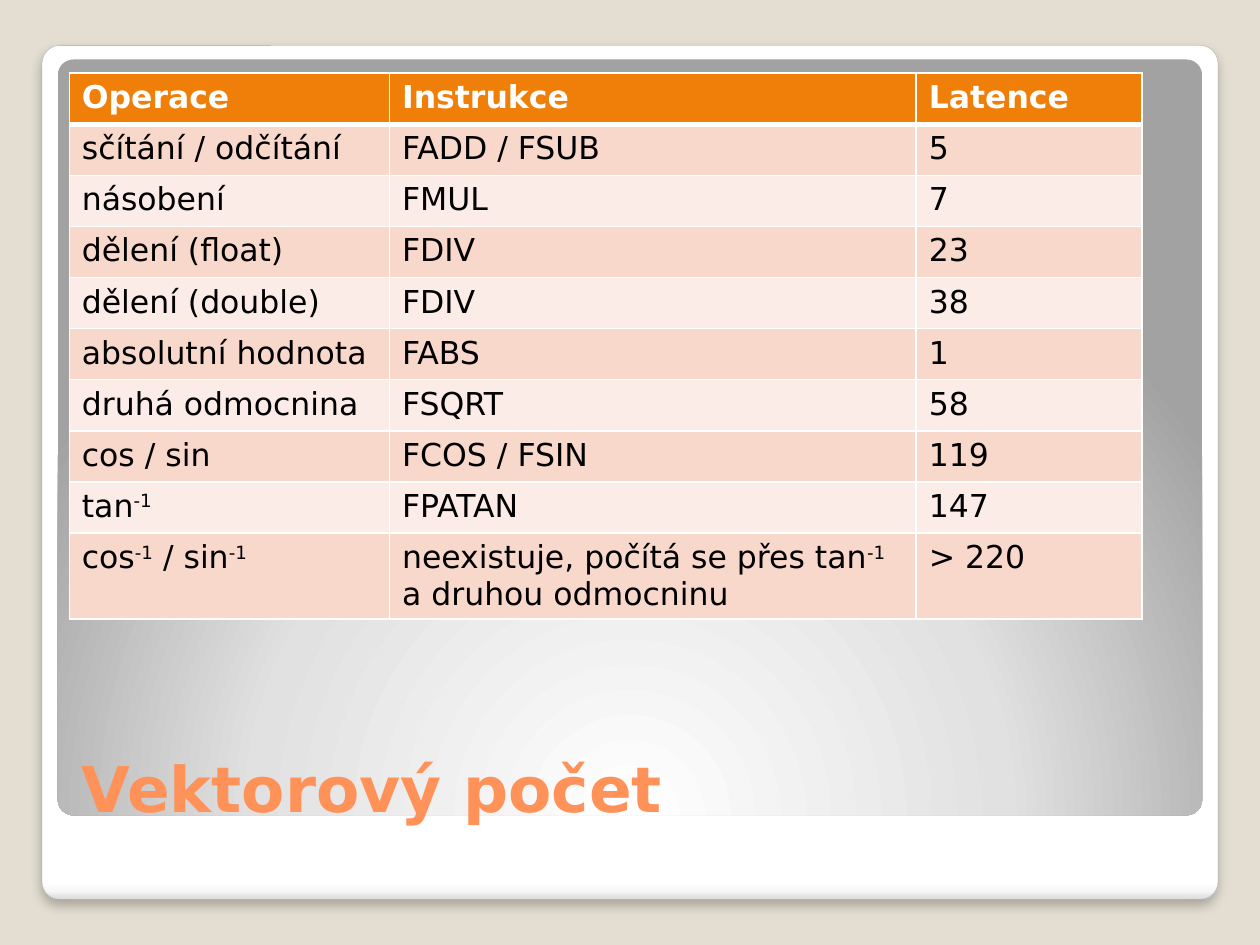
from lxml import etree
from pptx import Presentation
from pptx.dml.color import RGBColor
from pptx.enum.shapes import MSO_SHAPE
from pptx.enum.text import MSO_ANCHOR, PP_ALIGN
from pptx.oxml import parse_xml
from pptx.oxml.ns import nsdecls, qn
from pptx.util import Pt

FONT = "DejaVu Sans"
BACKGROUND = RGBColor(0xE3, 0xDE, 0xD1)
FRAME_LINE = RGBColor(0xA4, 0xA4, 0xA4)
TITLE = RGBColor(0xFF, 0x92, 0x58)
HEADER = RGBColor(0xF0, 0x7F, 0x09)
BANDS = [RGBColor(0xFC, 0xEC, 0xE7), RGBColor(0xF9, 0xD8, 0xCC)]
WHITE = RGBColor(0xFF, 0xFF, 0xFF)
BLACK = RGBColor(0, 0, 0)

# Text between carets is superscript
ROWS = [
    ("Operace", "Instrukce", "Latence"),
    ("sčítání / odčítání", "FADD / FSUB", "5"),
    ("násobení", "FMUL", "7"),
    ("dělení (float)", "FDIV", "23"),
    ("dělení (double)", "FDIV", "38"),
    ("absolutní hodnota", "FABS", "1"),
    ("druhá odmocnina", "FSQRT", "58"),
    ("cos / sin", "FCOS / FSIN", "119"),
    ("tan^-1^", "FPATAN", "147"),
    ("cos^-1^ / sin^-1^", "neexistuje, počítá se přes tan^-1^ a druhou odmocninu", "> 220"),
]


def add_panel(slide, left, top, width, height, stops, direction):
    panel = slide.shapes.add_shape(
        MSO_SHAPE.ROUNDED_RECTANGLE, Pt(left), Pt(top), Pt(width), Pt(height))
    panel.adjustments[0] = 0.021
    panel.shadow.inherit = False
    panel.line.fill.background()
    stop_list = "".join(
        f'<a:gs pos="{position * 1000}"><a:srgbClr val="{color}"/></a:gs>'
        for position, color in stops)
    panel._element.spPr.find(qn("a:prstGeom")).addnext(parse_xml(
        f'<a:gradFill {nsdecls("a")} rotWithShape="1">'
        f"<a:gsLst>{stop_list}</a:gsLst>{direction}</a:gradFill>"))
    return panel


def style_run(run, size, color, bold):
    run.font.name = FONT
    run.font.size = Pt(size)
    run.font.bold = bold
    run.font.color.rgb = color


presentation = Presentation()
presentation.slide_width, presentation.slide_height = Pt(720), Pt(540)
slide = presentation.slides.add_slide(presentation.slide_layouts[5])
slide.background.fill.solid()
slide.background.fill.fore_color.rgb = BACKGROUND

# White frame with a soft shadow
frame = add_panel(
    slide, 24, 26, 672, 488,
    [(0, "FFFFFF"), (98, "FFFFFF"), (99, "F7F7F7"), (100, "DADADA")],
    '<a:lin ang="5400000" scaled="0"/>')
frame.line.color.rgb = FRAME_LINE
frame.line.width = Pt(0.16)
frame_effects = frame._element.spPr.find(qn("a:effectLst"))
frame_effects.append(parse_xml(
    f'<a:outerShdw {nsdecls("a")} blurRad="{Pt(6)}" dist="{Pt(4)}" dir="5400000" '
    'algn="tl" rotWithShape="0"><a:srgbClr val="000000"><a:alpha val="25000"/>'
    "</a:srgbClr></a:outerShdw>"))

# Grey panel lit from below
add_panel(
    slide, 33, 34, 654, 432,
    [(0, "FFFFFF"), (55, "E1E1E1"), (100, "A2A2A2")],
    '<a:path path="circle"><a:fillToRect l="50000" t="175000" r="50000" b="-75000"/></a:path>')

# Title, brought in front of the panels
title = slide.shapes.title
slide.shapes._spTree.append(title._element)
title.left, title.top, title.width, title.height = Pt(39.6), Pt(392.4), Pt(644.4), Pt(82.8)
title.text_frame.vertical_anchor = MSO_ANCHOR.BOTTOM
title_line = title.text_frame.paragraphs[0]
title_line.alignment = PP_ALIGN.LEFT
title_run = title_line.add_run()
title_run.text = "Vektorový počet"
style_run(title_run, 36, TITLE, True)

# Latency table
column_widths = [183, 301, 129]
latencies = slide.shapes.add_table(
    len(ROWS), len(column_widths), Pt(39.6), Pt(41.8),
    Pt(sum(column_widths)), Pt(29.2 * len(ROWS))).table
for column, width in zip(latencies.columns, column_widths):
    column.width = Pt(width)

for row_index, texts in enumerate(ROWS):
    latencies.rows[row_index].height = Pt(29.2)
    is_header = row_index == 0
    for column_index, text in enumerate(texts):
        cell = latencies.cell(row_index, column_index)
        cell_properties = cell._tc.get_or_add_tcPr()
        for side in "LRTB":
            thick = (row_index, side) in [(0, "B"), (1, "T")]
            border = etree.SubElement(
                cell_properties, qn(f"a:ln{side}"), w=str(Pt(3 if thick else 1)))
            border_fill = etree.SubElement(border, qn("a:solidFill"))
            etree.SubElement(border_fill, qn("a:srgbClr"), val=str(WHITE))
        cell.fill.solid()
        cell.fill.fore_color.rgb = HEADER if is_header else BANDS[row_index % 2]
        paragraph = cell.text_frame.paragraphs[0]
        for part_index, part in enumerate(text.split("^")):
            if not part:
                continue
            run = paragraph.add_run()
            run.text = part
            style_run(run, 18, WHITE if is_header else BLACK, is_header)
            if part_index % 2:
                run.font._element.set("baseline", "30000")

presentation.save("out.pptx")
